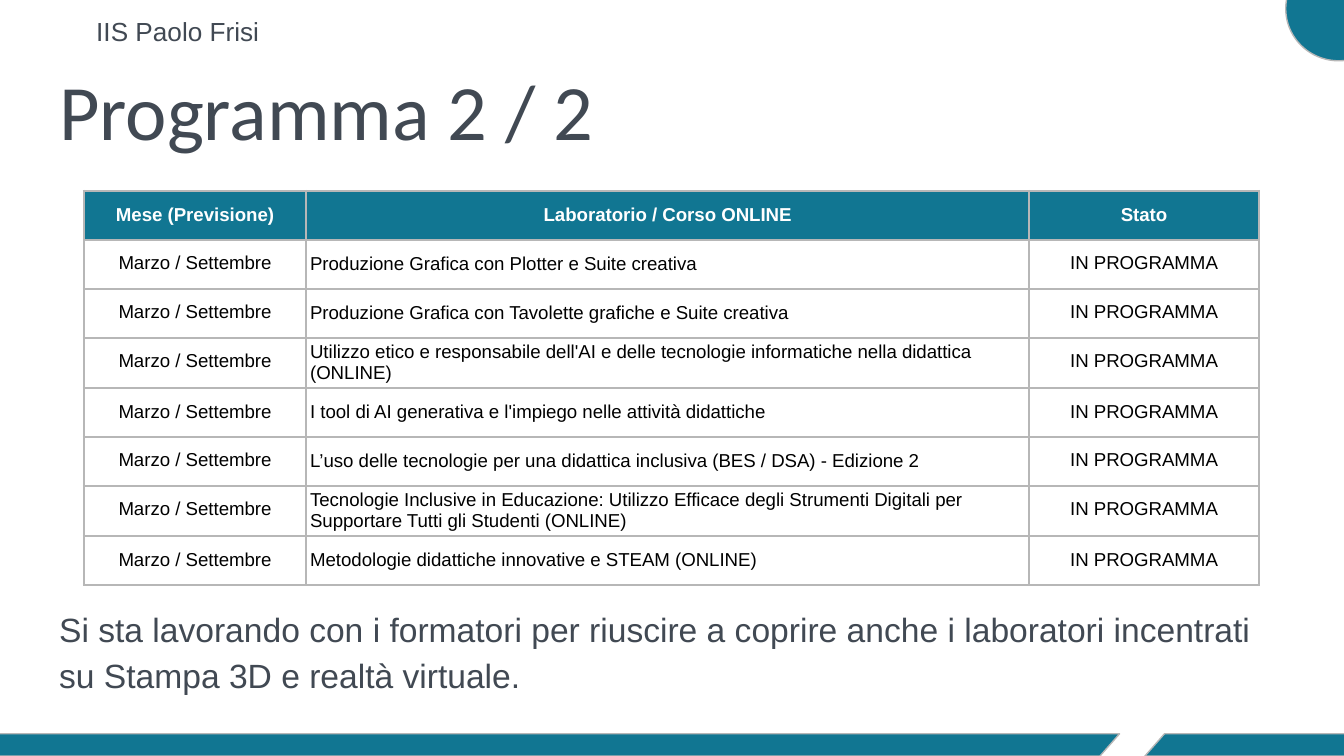
"""Build the second programme slide with its course table and closing note."""
from dataclasses import dataclass

from lxml.etree import SubElement
from pptx import Presentation
from pptx.dml.color import RGBColor
from pptx.enum.shapes import MSO_SHAPE
from pptx.enum.text import MSO_ANCHOR, PP_ALIGN
from pptx.oxml.ns import qn
from pptx.util import Cm, Pt


@dataclass(frozen=True)
class Theme:
    teal: str = "117692"
    grey: str = "B7B7B7"
    ink: str = "414953"
    black: str = "000000"
    white: str = "FFFFFF"
    font: str = "Arial"
    title_font: str = "Calibri"
    title: int = 42
    body: int = 18
    label: int = 14
    cell: int = 10
    outline: float = 0.75
    border: float = 1.5


T = Theme()
HEADERS = ["Mese (Previsione)", "Laboratorio / Corso ONLINE", "Stato"]
COURSES = [
    "Produzione Grafica con Plotter e Suite creativa",
    "Produzione Grafica con Tavolette grafiche e Suite creativa",
    "Utilizzo etico e responsabile dell'AI e delle tecnologie informatiche nella didattica (ONLINE)",
    "I tool di AI generativa e l'impiego nelle attività didattiche",
    "L’uso delle tecnologie per una didattica inclusiva (BES / DSA) - Edizione 2",
    "Tecnologie Inclusive in Educazione: Utilizzo Efficace degli Strumenti Digitali per "
    "Supportare Tutti gli Studenti (ONLINE)",
    "Metodologie didattiche innovative e STEAM (ONLINE)",
]
COL_WIDTHS = [4.19, 13.67, 4.34]
ROW_HEIGHT = 0.9


def format_runs(p, size, color, font=T.font, bold=False):
    for r in p.runs:
        r.font.size = Pt(size)
        r.font.name = font
        r.font.bold = bold
        r.font.color.rgb = RGBColor.from_string(color)


def add_text(s, text, box, size, font=T.font, anchor=MSO_ANCHOR.TOP, spacing=1.0):
    tf = s.shapes.add_textbox(*map(Cm, box)).text_frame
    tf.word_wrap = True
    tf.vertical_anchor = anchor
    tf.margin_left = tf.margin_right = tf.margin_top = tf.margin_bottom = Cm(0.25)
    tf.text = text
    p = tf.paragraphs[0]
    p.line_spacing = spacing
    format_runs(p, size, T.ink, font)


def add_accent(s, kind, box, slant=None):
    sp = s.shapes.add_shape(kind, *map(Cm, box))
    sp.shadow.inherit = False
    sp.fill.solid()
    sp.fill.fore_color.rgb = RGBColor.from_string(T.teal)
    sp.line.color.rgb = RGBColor.from_string(T.grey)
    sp.line.width = Pt(T.outline)
    if slant is not None:
        sp.adjustments[0] = slant


def set_borders(cell):
    tc_pr = cell._tc.get_or_add_tcPr()
    for side in ("lnL", "lnR", "lnT", "lnB"):
        ln = SubElement(tc_pr, qn(f"a:{side}"), w=str(Pt(T.border)))
        fill = SubElement(ln, qn("a:solidFill"))
        SubElement(fill, qn("a:srgbClr"), val=T.grey)


def fill_cell(cell, text, header, course):
    set_borders(cell)
    cell.fill.solid()
    cell.fill.fore_color.rgb = RGBColor.from_string(T.teal if header else T.white)
    cell.margin_left = cell.margin_right = Cm(0.08 if course else 0.25)
    cell.margin_top = cell.margin_bottom = Cm(0.05 if course else 0.25)
    cell.vertical_anchor = MSO_ANCHOR.MIDDLE if course else MSO_ANCHOR.TOP
    cell.text = text
    p = cell.text_frame.paragraphs[0]
    p.alignment = PP_ALIGN.LEFT if course else PP_ALIGN.CENTER
    format_runs(p, T.cell, T.white if header else T.black, bold=header)


def add_programme(s, left, top):
    rows = [HEADERS] + [["Marzo / Settembre", c, "IN PROGRAMMA"] for c in COURSES]
    size = (sum(COL_WIDTHS), ROW_HEIGHT * len(rows))
    table = s.shapes.add_table(
        len(rows), len(HEADERS), Cm(left), Cm(top), *map(Cm, size)).table
    table.horz_banding = False
    for column, width in zip(table.columns, COL_WIDTHS):
        column.width = Cm(width)
    for i, row in enumerate(rows):
        table.rows[i].height = Cm(ROW_HEIGHT)
        for j, text in enumerate(row):
            fill_cell(table.cell(i, j), text, header=i == 0, course=i > 0 and j == 1)


def main():
    prs = Presentation()
    prs.slide_width, prs.slide_height = Cm(25.4), Cm(14.29)
    s = prs.slides.add_slide(prs.slide_layouts[6])
    add_text(s, "IIS Paolo Frisi", (1.57, 0.05, 5.44, 1.02), T.label)
    for left, width in ((-0.38, 21.54), (21.64, 4.14)):
        add_accent(s, MSO_SHAPE.PARALLELOGRAM, (left, 13.87, width, 0.42), slant=0.88)
    add_accent(s, MSO_SHAPE.OVAL, (24.3, -0.82, 2, 1.97))
    add_text(s, "Si sta lavorando con i formatori per riuscire a coprire anche i laboratori "
             "incentrati su Stampa 3D e realtà virtuale.",
             (0.87, 11.14, 23.67, 2.2), T.body, spacing=1.15)
    add_programme(s, 1.59, 3.61)
    add_text(s, "Programma 2 / 2", (0.87, 0.89, 23.67, 2.31), T.title,
             T.title_font, MSO_ANCHOR.BOTTOM)
    prs.save("out.pptx")


if __name__ == "__main__":
    main()
